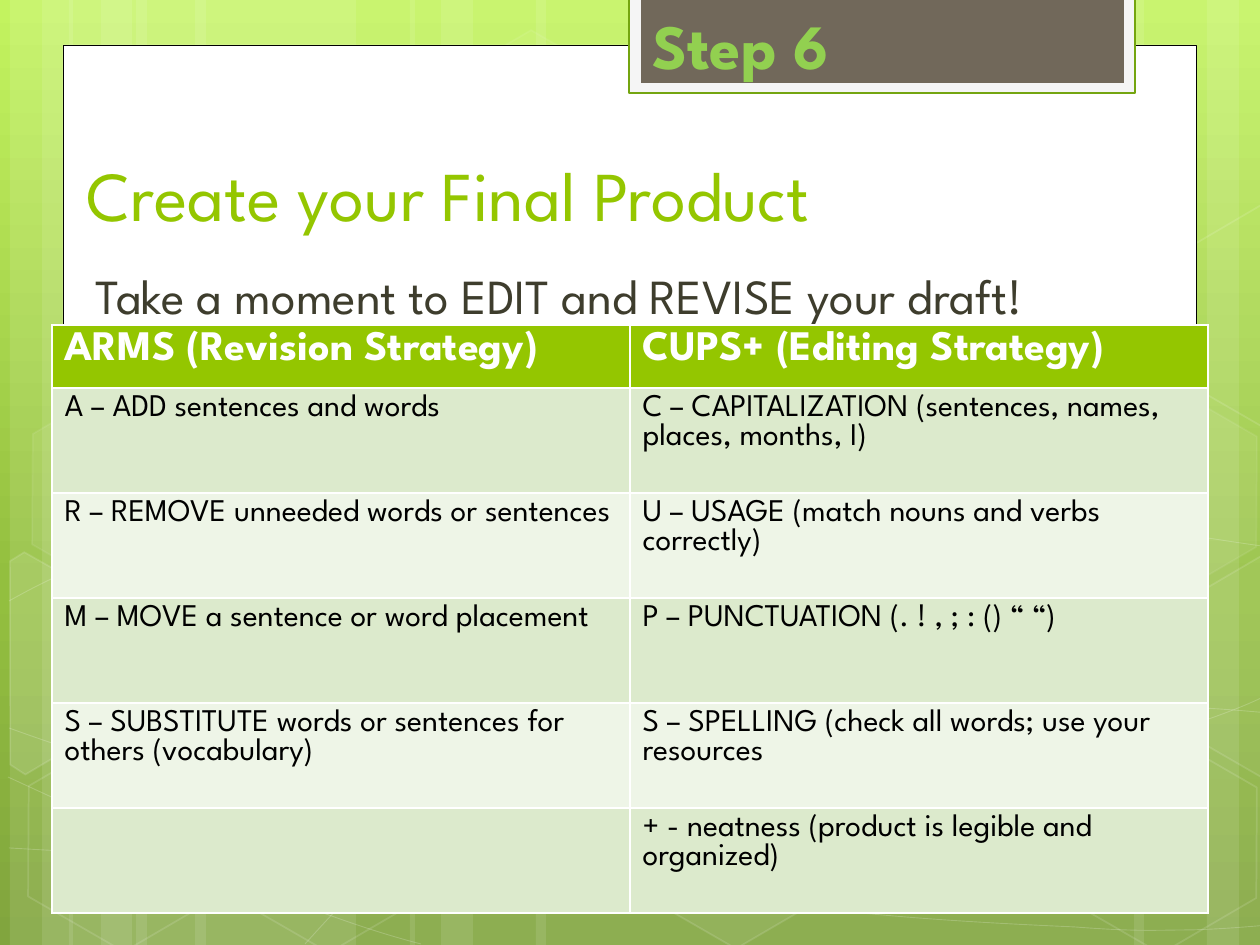
from math import cos, radians, sin

from lxml import etree
from pptx import Presentation
from pptx.dml.color import RGBColor
from pptx.enum.shapes import MSO_SHAPE
from pptx.enum.text import MSO_ANCHOR
from pptx.oxml.ns import qn
from pptx.util import Emu, Pt

RECT, HEX = MSO_SHAPE.RECTANGLE, MSO_SHAPE.HEXAGON
TOP, BOTTOM = MSO_ANCHOR.TOP, MSO_ANCHOR.BOTTOM
SCALE = 914400 / 126
TILT = 30
FONT = "League Spartan"
WHITE = "FFFFFF"
LIME = "94C600"
STOPS = [(0, "C3F35F"), (62, "93BF3F"), (100, "81A53E")]
BANDS = [(136, 220), (10, 63), (42, 105), (195, 220), (69, 63), (101, 105),
         (924, 220), (1207, 63), (1134, 105), (536, 388), (410, 63), (441, 105)]
CURVES = [
    [(9, 848), (77, 852), (145, 856), (239, 854), (334, 853), (451, 851), (577, 838),
     (703, 825), (882, 801), (998, 777), (1113, 753), (1231, 715), (1269, 694)],
    [(9, 601), (45, 581), (82, 562), (152, 543), (224, 523), (326, 496), (437, 488),
     (549, 479), (685, 478), (824, 488), (963, 497), (1193, 537), (1269, 547)],
    [(8, 777), (160, 847), (311, 916), (421, 944)],
    [(9, 728), (48, 742), (88, 756), (161, 776), (234, 795), (344, 827), (450, 848),
     (554, 869), (687, 892), (791, 905), (896, 919), (1008, 924), (1075, 927),
     (1140, 932), (1158, 930), (1191, 930), (1223, 929), (1246, 927), (1269, 925)],
    [(305, 944), (328, 919), (350, 893), (381, 871), (411, 848), (454, 823), (489, 805),
     (524, 788), (546, 780), (592, 767), (638, 754), (722, 737), (766, 728),
     (811, 719), (818, 719), (857, 717), (896, 713), (958, 709), (1000, 708),
     (1045, 707), (1116, 708), (1116, 708), (1144, 708), (1173, 708), (1201, 708),
     (1223, 709), (1245, 711), (1268, 713)],
]
CELLS = [(421, 45, 4, 8), (626, 742, 6, 12), (14, 745, 0, 12), (18, 393, 7, 8),
         (219, 746, 0, 12), (949, 571, 10, 12), (1051, 747, 0, 12), (1051, 396, 7, 8)]
LEFT = [(10, 561), (24, 552), (121, 607), (120, 718), (25, 774), (10, 765)]
RIGHT = [(1167, 611), (1261, 556), (1271, 562), (1271, 772), (1262, 777), (1167, 722)]
HIGH = [(x, y - 351) for x, y in RIGHT]
EDGES = [(LEFT, (45, 674), 10), (RIGHT, (1241, 655), 4), (HIGH, (1241, 304), 0)]
ROWS = [
    ("ARMS (Revision Strategy)", "CUPS+ (Editing Strategy)"),
    ("A – ADD sentences and words",
     "C – CAPITALIZATION (sentences, names, places, months, I)"),
    ("R – REMOVE unneeded words or sentences",
     "U – USAGE (match nouns and verbs correctly)"),
    ("M – MOVE a sentence or word placement", "P – PUNCTUATION (. ! , ; : () “ “)"),
    ("S – SUBSTITUTE words or sentences for others (vocabulary)",
     "S – SPELLING (check all words; use your resources"),
    ("", "+ - neatness (product is legible and organized)"),
]


def px(n):
    return Emu(round(n * SCALE))


def color(text):
    return RGBColor.from_string(text)


def paint(fill, tone, alpha=100):
    if not tone or not alpha:
        fill.background()
        return
    fill.solid()
    fill.fore_color.rgb = color(tone)
    if alpha < 100:
        node = next(fill._xPr.iter(qn("a:srgbClr")))
        etree.SubElement(node, qn("a:alpha"), val=str(alpha * 1000))


def dress(shape, tone=None, alpha=100, line=None, width=1, clear=100):
    shape.shadow.inherit = False
    paint(shape.fill, tone, alpha)
    paint(shape.line.fill, line, clear)
    if line:
        shape.line.width = Pt(width)
    return shape


def block(slide, box, kind=RECT, **look):
    shape = slide.shapes.add_shape(kind, *map(px, box))
    return dress(shape, **look)


def trace(slide, origin, pts, close, **look):
    left, top = origin
    pts = [(left + x, top + y) for x, y in pts]
    form = slide.shapes.build_freeform(*pts[0], scale=SCALE)
    form.add_line_segments(pts[1:], close=close)
    return dress(form.convert_to_shape(), **look)


def bend(shape):
    lines = list(shape._element.iter(qn("a:lnTo")))
    for i in range(0, len(lines), 3):
        curve = etree.Element(qn("a:cubicBezTo"))
        lines[i].addprevious(curve)
        for line in lines[i:i + 3]:
            curve.append(line[0])
            line.getparent().remove(line)


def turn(pts, mid, angle):
    a, (cx, cy) = radians(angle), mid
    return [(cx + (x - cx) * cos(a) - (y - cy) * sin(a),
             cy + (x - cx) * sin(a) + (y - cy) * cos(a)) for x, y in pts]


def write(para, text, size, tone, bold=False):
    run = para.add_run()
    run.text = text
    for key, val in {"name": FONT, "size": Pt(size), "bold": bold}.items():
        setattr(run.font, key, val)
    run.font.color.rgb = color(tone)


def label(slide, box, text, size, tone, bold=False, **frame):
    body = slide.shapes.add_textbox(*map(px, box)).text_frame
    for key, val in {"word_wrap": True, **frame}.items():
        setattr(body, key, val)
    write(body.paragraphs[0], text, size, tone, bold)


def shade(slide):
    fill = slide.background.fill
    fill.gradient()
    fill.gradient_angle = 270
    stops = next(fill._xPr.iter(qn("a:gsLst")))
    for old in list(stops):
        stops.remove(old)
    for pos, tone in STOPS:
        stop = etree.SubElement(stops, qn("a:gs"), pos=str(pos * 1000))
        etree.SubElement(stop, qn("a:srgbClr"), val=tone)


def scene(slide, box):
    left, top, _, high = box
    for x, wide in BANDS:
        block(slide, (left + x, top, wide, high), tone=WHITE, alpha=10)
    for knots in CURVES:
        bend(trace(slide, (left, top), knots, False, line=WHITE, width=0.5, clear=20))
    for x, y, alpha, clear in CELLS:
        cell = block(slide, (left + x, top + y, 220, 192), HEX, tone=WHITE,
                     alpha=alpha, line=WHITE, clear=clear)
        cell.adjustments[0] = 0.285
        cell.rotation = TILT
    for pts, mid, alpha in EDGES:
        edge = trace(slide, (left, top), turn(pts, mid, -TILT), True, tone=WHITE,
                     alpha=alpha, line=WHITE, clear=12)
        edge.rotation = TILT


def panel(slide, box):
    left, top, wide, _ = box
    block(slide, box, tone=WHITE, line="000000", width=0.5)
    label(slide, (left + 10, top + 46, wide, 158), "Create your Final Product", 40, LIME,
          vertical_anchor=BOTTOM, margin_left=px(14), margin_bottom=px(13))
    label(slide, (left + 10, top + 207, wide, 724),
          "Take a moment to EDIT and REVISE your draft!", 28, "3E3D2D",
          vertical_anchor=TOP, margin_left=px(23), margin_top=px(13))


def badge(slide, box):
    left, top, wide, high = box
    block(slide, box, tone="F5F5F5", line="74A510", width=1.25)
    inner = left + 12, wide - 23
    block(slide, (inner[0], top, inner[1], high - 10), tone="71685A")
    label(slide, (inner[0], top + 2, inner[1], 89), "Step 6", 36, "92D050", True,
          vertical_anchor=BOTTOM, margin_left=px(11))


def grid(slide, box, first=63):
    table = slide.shapes.add_table(len(ROWS), 2, *map(px, box)).table
    rest = (box[3] - first) / (len(ROWS) - 1)
    for col in table.columns:
        col.width = px(box[2] / 2)
    for r, texts in enumerate(ROWS):
        head = r == 0
        table.rows[r].height = px(first if head else rest)
        tone = LIME if head else ("EEF5E7", "DCEACC")[r % 2]
        style = (24, WHITE, True) if head else (18, "000000")
        for c, text in enumerate(texts):
            cell = table.cell(r, c)
            paint(cell.fill, tone)
            if text:
                write(cell.text_frame.paragraphs[0], text, *style)


def main():
    deck = Presentation()
    deck.slide_width, deck.slide_height = px(1260), px(945)
    slide = deck.slides.add_slide(deck.slide_layouts[6])
    shade(slide)
    scene(slide, (0, 0, 1260, 945))
    panel(slide, (63, 45, 1134, 852))
    badge(slide, (629, -3, 506, 96))
    grid(slide, (52, 325, 1156, 588))
    deck.save("out.pptx")


if __name__ == "__main__":
    main()
